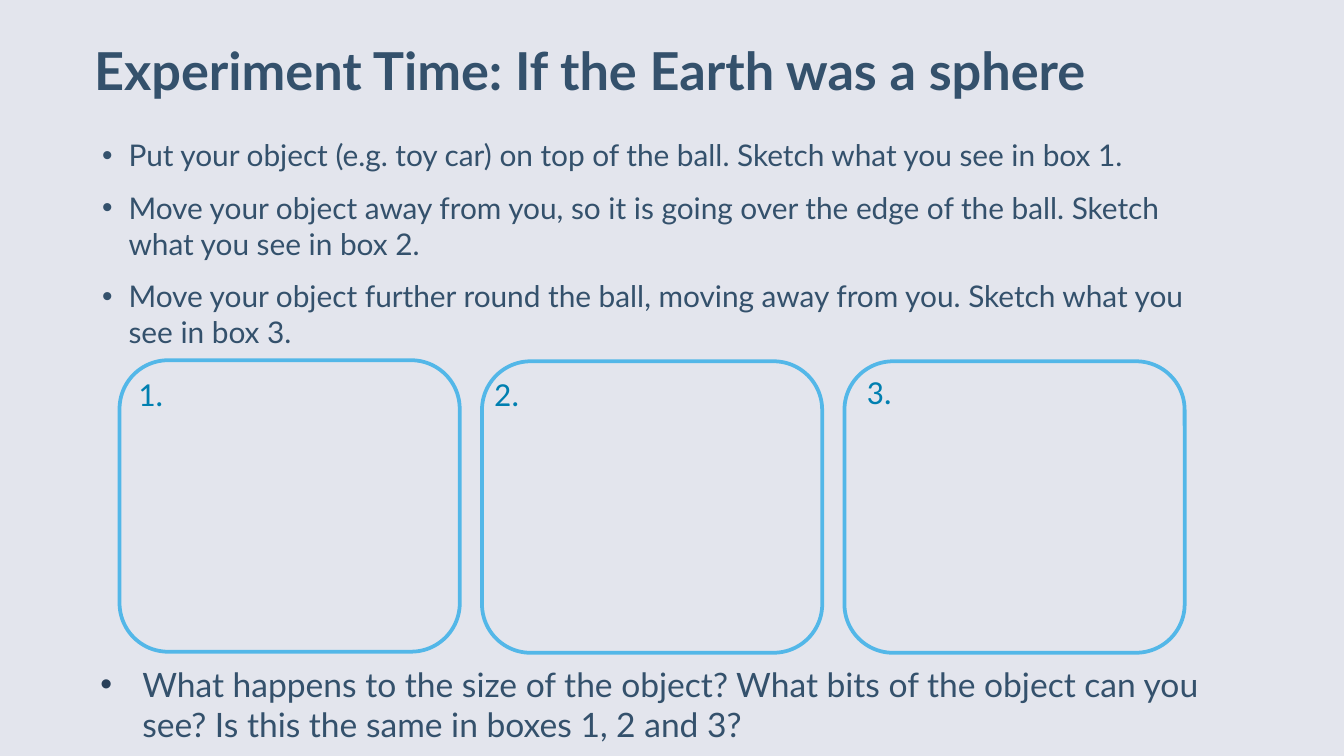
from dataclasses import dataclass

from lxml import etree
from pptx import Presentation
from pptx.dml.color import RGBColor
from pptx.enum.shapes import MSO_SHAPE
from pptx.enum.text import MSO_ANCHOR, MSO_AUTO_SIZE, PP_ALIGN
from pptx.oxml.ns import qn
from pptx.shapes.shapetree import GroupShapes
from pptx.text.text import TextFrame, _Paragraph
from pptx.util import Cm, Pt

ROUNDED = MSO_SHAPE.ROUNDED_RECTANGLE
BOTTOM, TOP = MSO_ANCHOR.BOTTOM, MSO_ANCHOR.TOP
LEFT = PP_ALIGN.LEFT
NO_FIT, GROW = MSO_AUTO_SIZE.NONE, MSO_AUTO_SIZE.SHAPE_TO_FIT_TEXT

BACKGROUND = RGBColor(0xE3, 0xE5, 0xED)
NAVY = RGBColor(0x34, 0x51, 0x6C)
DARK_NAVY = RGBColor(0x28, 0x3F, 0x59)
SKY = RGBColor(0x53, 0xB7, 0xE8)
BLUE = RGBColor(0x00, 0x7F, 0xB0)

TITLE = "Experiment Time: If the Earth was a sphere"
STEPS = [
    "Put your object (e.g. toy car) on top of the ball. Sketch what you see in box 1.",
    "Move your object away from you, so it is going over the edge of the ball. "
    "Sketch what you see in box 2.",
    "Move your object further round the ball, moving away from you. "
    "Sketch what you see in box 3.",
]
QUESTION = (
    "What happens to the size of the object? What bits of the object can you see? "
    "Is this the same in boxes 1, 2 and 3?"
)

FIRST_BOX_LEFT, BOX_PITCH = 2.26, 6.85
BOX_WIDTH, BOX_HEIGHT = 6.43, 5.51


@dataclass(frozen=True)
class SketchBox:
    """Top of a box and position of its number, in centimetres."""
    top: float
    number_left: float
    number_top: float


SKETCH_BOXES = [
    SketchBox(6.81, 2.36, 6.93),
    SketchBox(6.83, 9.09, 6.93),
    SketchBox(6.83, 16.13, 6.88),
]


def place(shape, left: float, top: float, width: float, height: float) -> None:
    shape.left, shape.top = Cm(left), Cm(top)
    shape.width, shape.height = Cm(width), Cm(height)


def clear_insets(frame: TextFrame) -> None:
    frame.margin_left = frame.margin_top = 0
    frame.margin_right = frame.margin_bottom = 0


def set_font(paragraph: _Paragraph, size: float, color: RGBColor,
             name: str = "Lato", bold: bool = False) -> None:
    font = paragraph.font
    font.name, font.size, font.bold = name, Pt(size), bold
    font.color.rgb = color


def add_bullet(paragraph: _Paragraph, indent: float, color: RGBColor) -> None:
    properties = paragraph._p.get_or_add_pPr()
    properties.set("marL", str(Cm(indent)))
    properties.set("indent", str(-Cm(indent)))
    bullet_color = etree.SubElement(properties, qn("a:buClr"))
    etree.SubElement(bullet_color, qn("a:srgbClr"), val=str(color))
    etree.SubElement(properties, qn("a:buFont"), typeface="Arial")
    etree.SubElement(properties, qn("a:buChar"), char="•")


def add_sketch_box(shapes: GroupShapes, number: int, box: SketchBox) -> None:
    left = FIRST_BOX_LEFT + (number - 1) * BOX_PITCH
    outline = shapes.add_shape(
        ROUNDED, Cm(left), Cm(box.top), Cm(BOX_WIDTH), Cm(BOX_HEIGHT))
    outline.shadow.inherit = False
    outline.fill.background()
    outline.line.color.rgb = SKY
    outline.line.width = Pt(2)

    label = shapes.add_textbox(
        Cm(box.number_left), Cm(box.number_top), Cm(1.04), Cm(1.02))
    frame = label.text_frame
    frame.word_wrap = False
    frame.auto_size = GROW
    frame.text = f"{number}."
    set_font(frame.paragraphs[0], 18, BLUE, "Calibri")


def main() -> None:
    presentation = Presentation()
    presentation.slide_width, presentation.slide_height = Cm(25.4), Cm(14.29)
    slide = presentation.slides.add_slide(presentation.slide_layouts[1])
    slide.background.fill.solid()
    slide.background.fill.fore_color.rgb = BACKGROUND

    title = slide.shapes.title
    place(title, 1.78, 0.15, 23.06, 1.78)
    heading = title.text_frame
    heading.text = TITLE
    heading.auto_size = NO_FIT
    heading.vertical_anchor = BOTTOM
    clear_insets(heading)
    heading.paragraphs[0].alignment = LEFT
    heading.paragraphs[0].line_spacing = 0.9
    set_font(heading.paragraphs[0], 28, NAVY, bold=True)

    body = slide.placeholders[1]
    place(body, 1.93, 2.59, 21.21, 9.42)
    instructions = body.text_frame
    instructions.text = "\n".join(STEPS)
    instructions.auto_size = NO_FIT
    instructions.vertical_anchor = TOP
    clear_insets(instructions)
    for index, step in enumerate(instructions.paragraphs):
        add_bullet(step, 0.5, NAVY)
        step.space_before = Pt(9 if index else 0)
        set_font(step, 16, NAVY)

    sketches = slide.shapes.add_group_shape()
    for number, box in enumerate(SKETCH_BOXES, start=1):
        add_sketch_box(sketches.shapes, number, box)

    question = slide.shapes.add_textbox(Cm(1.65), Cm(12.42), Cm(22.1), Cm(1.9))
    prompt = question.text_frame
    prompt.word_wrap = True
    prompt.text = QUESTION
    add_bullet(prompt.paragraphs[0], 0.79, DARK_NAVY)
    set_font(prompt.paragraphs[0], 18, NAVY)

    presentation.save("out.pptx")


if __name__ == "__main__":
    main()
